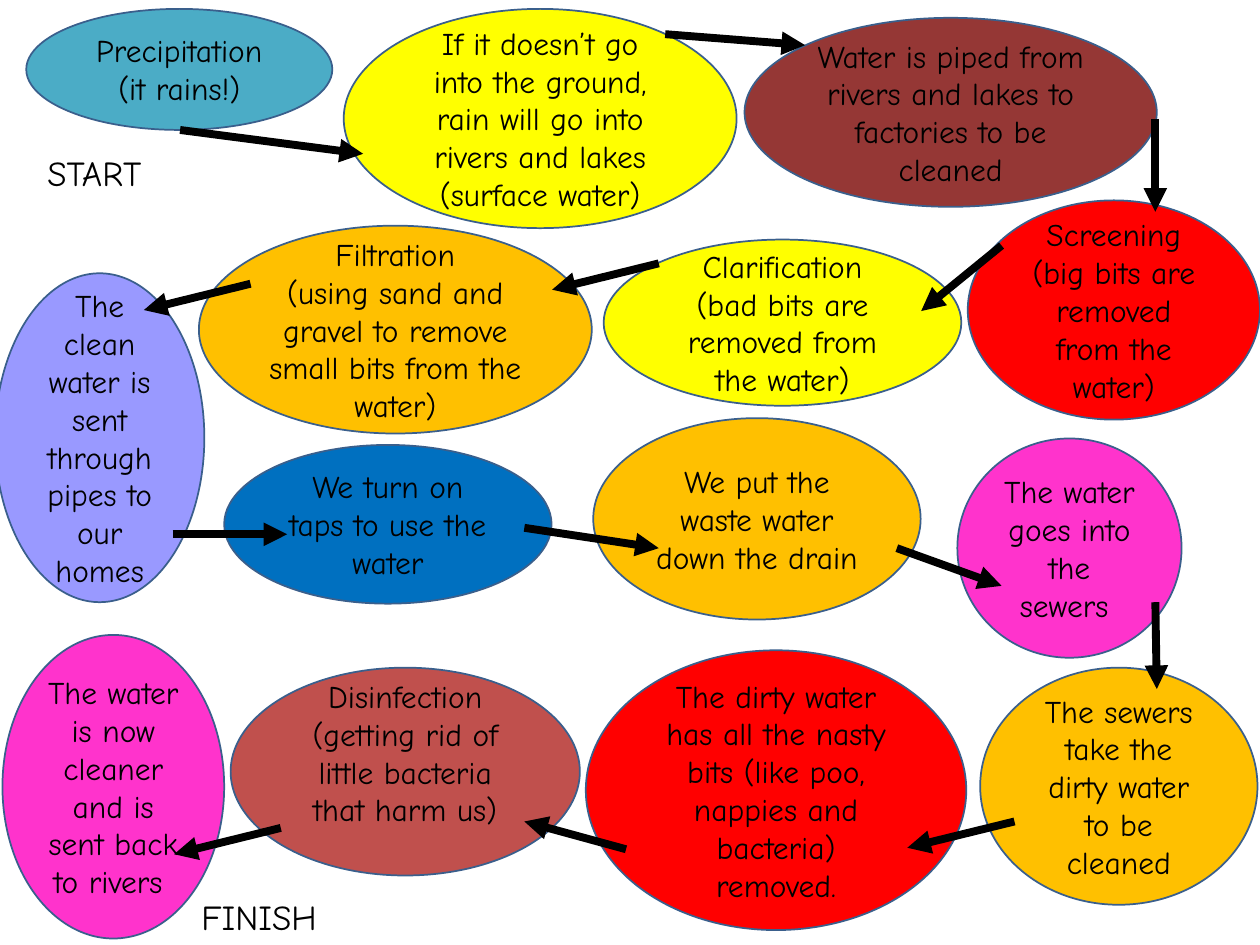
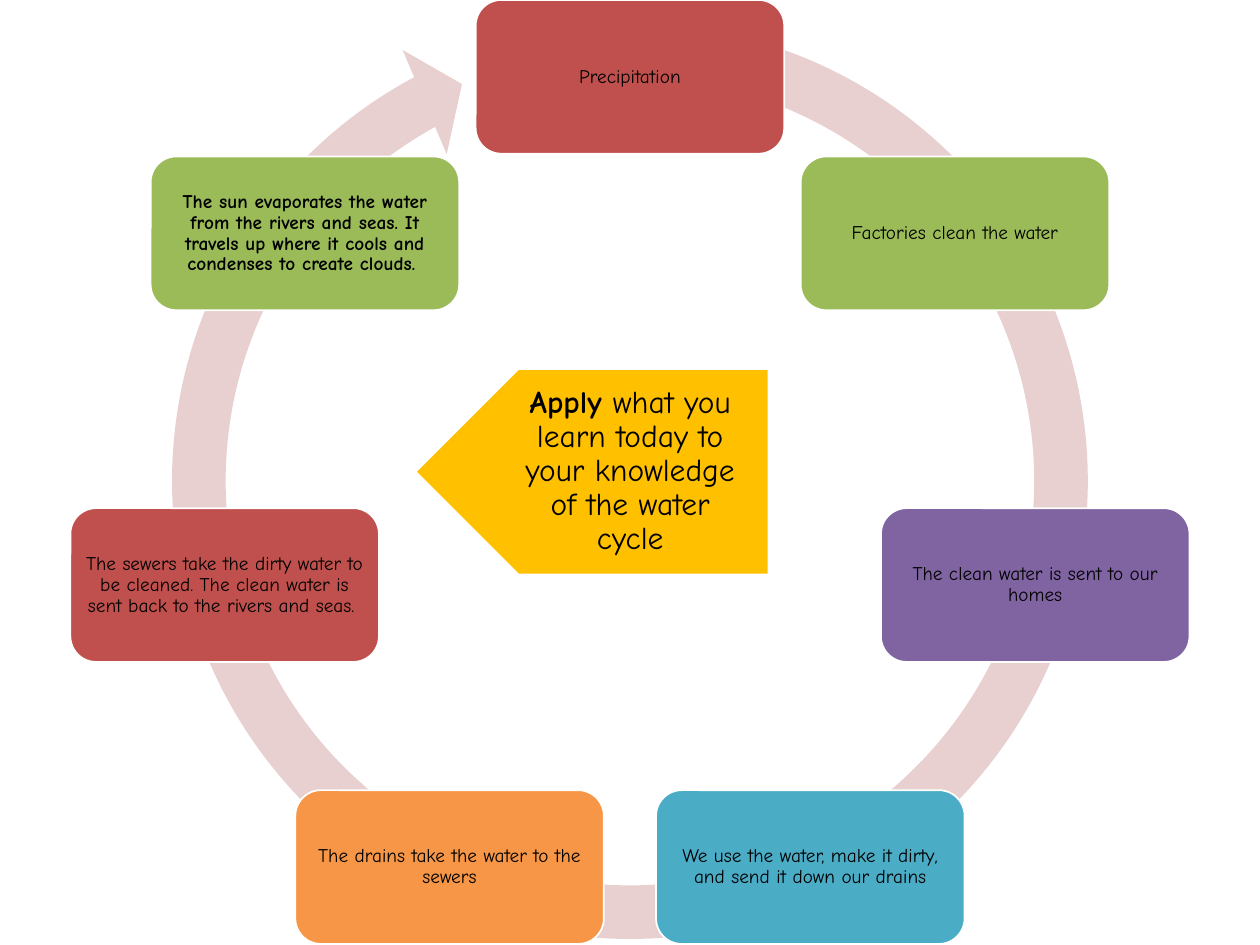
from math import cos, pi, sin
from typing import NamedTuple

from lxml.etree import SubElement
from pptx import Presentation
from pptx.dml.color import RGBColor
from pptx.enum.shapes import MSO_CONNECTOR, MSO_SHAPE
from pptx.enum.text import MSO_ANCHOR, PP_ALIGN
from pptx.oxml.ns import qn
from pptx.util import Cm, Pt

HUES = {
    "black": "000000", "white": "FFFFFF", "edge": "3A5F8C",
    "aqua": "4BACC6", "yellow": "FFFF00", "maroon": "953735",
    "red": "FF0000", "gold": "FFC000", "lilac": "9999FF",
    "blue": "0070C0", "pink": "FF33CC", "brick": "C0504D",
    "green": "9BBB59", "purple": "8064A2", "orange": "F79646",
    "blush": "E8D0D0",
}
FONT = "Comic Neue"


class Box(NamedTuple):
    left: float
    top: float
    width: float
    height: float


class Step(NamedTuple):
    box: Box
    hue: str
    text: str
    foot: float = 0.13


class Arrow(NamedTuple):
    x: float
    y: float
    end_x: float
    end_y: float


class Node(NamedTuple):
    hue: str
    text: str
    bold: bool = False


STEPS = [
    Step(Box(0.53, 0.18, 6.17, 2.44), "aqua", "Precipitation (it rains!)"),
    Step(Box(6.93, 0.18, 7.92, 4.42), "yellow",
         "If it doesn’t go into the ground, rain will go into rivers and lakes (surface water)"),
    Step(Box(15.01, 0.36, 8.31, 3.81), "maroon",
         "Water is piped from rivers and lakes to factories to be cleaned"),
    Step(Box(19.51, 4.04, 5.89, 4.42), "red",
         "Screening (big bits are removed from the water)"),
    Step(Box(12.17, 4.83, 7.21, 3.35), "yellow",
         "Clarification\n(bad bits are removed from the water)"),
    Step(Box(4.01, 4.55, 7.92, 4.19), "gold",
         "Filtration\n(using sand and gravel to remove small bits from the water)"),
    Step(Box(-0.1, 5.51, 4.22, 6.63), "lilac",
         "The clean water is sent through pipes to our homes"),
    Step(Box(4.52, 8.97, 6.6, 3.2), "blue", "We turn on taps to use the water"),
    Step(Box(11.96, 8.43, 6.6, 4.06), "gold", "We put the waste water down the drain"),
    Step(Box(19.3, 8.84, 4.52, 4.42), "pink", "The water goes into the sewers "),
    Step(Box(19.76, 13.46, 5.59, 4.78), "gold",
         "The sewers take the dirty water to be cleaned"),
    Step(Box(11.81, 13.11, 7.67, 5.64), "red",
         "The dirty water has all the nasty bits (like poo, nappies and bacteria) removed."),
    Step(Box(4.65, 13.46, 7.04, 4.19), "brick",
         "Disinfection\n(getting rid of little bacteria that harm us)", 0.89),
    Step(Box(0.05, 12.8, 4.47, 6.12), "pink",
         "The water is now cleaner and is sent back to rivers "),
]
ARROWS = [
    Arrow(3.63, 2.62, 7.32, 3.1), Arrow(13.41, 0.69, 16.23, 0.91),
    Arrow(23.29, 2.39, 23.29, 4.27), Arrow(20.19, 4.95, 18.57, 6.27),
    Arrow(13.28, 5.31, 11.13, 5.84), Arrow(5.05, 5.72, 2.9, 6.25),
    Arrow(3.48, 10.77, 5.79, 10.77), Arrow(10.57, 10.64, 13.28, 11.05),
    Arrow(18.08, 11.05, 20.19, 11.81), Arrow(23.29, 12.14, 23.32, 13.89),
    Arrow(20.45, 16.56, 18.29, 17.09), Arrow(12.62, 17.12, 10.57, 16.56),
    Arrow(5.66, 16.69, 3.51, 17.22),
]
TAGS = {"START": Box(0.43, 2.92, 2.95, 1.12), "FINISH": Box(3.56, 17.93, 3.33, 1.12)}
NODES = [
    Node("brick", "Precipitation"),
    Node("green", "Factories clean the water"),
    Node("purple", "The clean water is sent to our homes"),
    Node("aqua", "We use the water, make it dirty, and send it down our drains"),
    Node("orange", "The drains take the water to the sewers"),
    Node("brick", "The sewers take the dirty water to be cleaned. "
         "The clean water is sent back to the rivers and seas. "),
    Node("green", "The sun evaporates the water from the rivers and seas. "
         "It travels up where it cools and condenses to create clouds. ", True),
]


def tint(name: str) -> RGBColor:
    return RGBColor.from_string(HUES[name])


def apply(target, style: dict) -> None:
    for name, value in style.items():
        setattr(target, name, value)


def sides(left: float, top: float, right: float, bottom: float) -> dict:
    """Turn four insets in centimetres into frame margins."""
    return {"margin_left": Cm(left), "margin_top": Cm(top),
            "margin_right": Cm(right), "margin_bottom": Cm(bottom)}


def write(frame, text: str, size: int, lead: str = "", bold: bool = False,
          space: float = 1.0, **style) -> None:
    """Fill a frame with centred text, opened by an optional bold lead."""
    apply(frame, {"word_wrap": True, "vertical_anchor": MSO_ANCHOR.MIDDLE, **style})
    for i, line in enumerate(text.split("\n")):
        para = frame.add_paragraph() if i else frame.paragraphs[0]
        apply(para, {"alignment": PP_ALIGN.CENTER, "line_spacing": space})
        parts = [(lead, True)] if lead and not i else []
        for words, heavy in parts + [(line, bold)]:
            run = para.add_run()
            run.text = words
            apply(run.font, {"name": FONT, "size": Pt(size), "bold": heavy})
            run.font.color.rgb = tint("black")


def draw(slide, kind: MSO_SHAPE, box: Box, hue: str, edge: str = ""):
    shape = slide.shapes.add_shape(kind, *map(Cm, box))
    shape.shadow.inherit = False
    shape.fill.solid()
    shape.fill.fore_color.rgb = tint(hue)
    if edge:
        shape.line.color.rgb = tint(edge)
        shape.line.width = Pt(1)
    else:
        shape.line.fill.background()
    return shape


def link(slide, arrow: Arrow) -> None:
    """Join two steps with a thick arrow."""
    line = slide.shapes.add_connector(MSO_CONNECTOR.STRAIGHT, *map(Cm, arrow))
    line.line.color.rgb = tint("black")
    line.line.width = Pt(4.5)
    SubElement(line.line._get_or_add_ln(), qn("a:tailEnd"), type="triangle")
    SubElement(line._element.spPr, qn("a:effectLst"))


def label(slide, box: Box):
    return slide.shapes.add_textbox(*map(Cm, box)).text_frame


def flow(slide) -> None:
    for step in STEPS:
        oval = draw(slide, MSO_SHAPE.OVAL, step.box, step.hue, "edge")
        write(oval.text_frame, step.text, 18, margin_bottom=Cm(step.foot))
    for arrow in ARROWS:
        link(slide, arrow)
    for text, box in TAGS.items():
        write(label(slide, box), text, 20, word_wrap=False,
              vertical_anchor=MSO_ANCHOR.TOP)


def cycle(slide) -> None:
    ring = draw(slide, MSO_SHAPE.CIRCULAR_ARROW, Box(2.87, -0.13, 19.66, 19.66), "blush")
    for i, value in enumerate((0.055, 3.307, 144.937, 169.629, 0.058)):
        ring.adjustments[i] = value

    mid_x, mid_y, reach = 12.7, 9.93, 8.38
    width, height = 6.22, 3.1
    for i, node in enumerate(NODES):
        turn = 2 * pi * i / len(NODES)
        box = Box(mid_x + reach * sin(turn) - width / 2,
                  mid_y - reach * cos(turn) - height / 2, width, height)
        card = draw(slide, MSO_SHAPE.ROUNDED_RECTANGLE, box, node.hue, "white")
        write(card.text_frame, node.text, 11, bold=node.bold, space=0.9,
              **sides(0.13, 0.13, 0.13, 0.13))

    plate = draw(slide, MSO_SHAPE.PENTAGON, Box(8.38, 7.44, 7.11, 4.14), "gold", "white")
    plate.rotation = 180
    write(label(slide, Box(8.81, 7.44, 6.68, 4.14)),
          "what you learn today to your knowledge of the water cycle", 18,
          lead="Apply ", space=0.9, **sides(1.57, 0.25, 0.46, 0.25))


def main() -> None:
    deck = Presentation()
    apply(deck, {"slide_width": Cm(25.4), "slide_height": Cm(19.05)})
    for paint in (flow, cycle):
        paint(deck.slides.add_slide(deck.slide_layouts[6]))
    deck.save("out.pptx")


if __name__ == "__main__":
    main()
